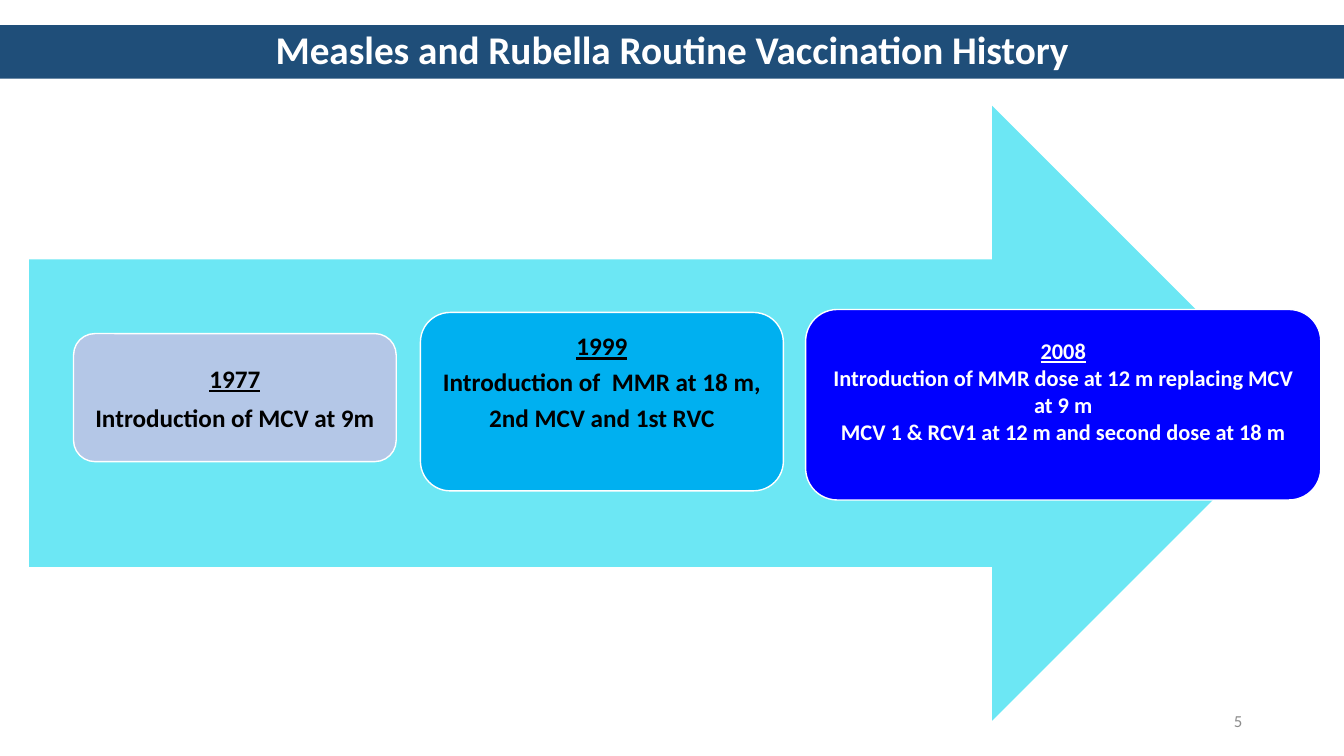
from pptx import Presentation
from pptx.dml.color import RGBColor
from pptx.enum import shapes, text
from pptx.util import Inches, Pt

WHITE, BLACK = "FFFFFF", "000000"


def rgb(value):
    return RGBColor.from_string(value)


def write(shape, lines, size, color, bold=True, align=text.PP_ALIGN.CENTER,
          spacing=1.0, after=0, heading=False, inset=(0.07, 0.07, 0.07, 0.07)):
    """Fill a shape with one paragraph per line; a heading line is underlined."""
    frame = shape.text_frame
    frame.word_wrap = True
    frame.auto_size = text.MSO_AUTO_SIZE.NONE
    frame.vertical_anchor = text.MSO_ANCHOR.MIDDLE
    (frame.margin_left, frame.margin_top,
     frame.margin_right, frame.margin_bottom) = map(Inches, inset)
    for i, line in enumerate(lines):
        paragraph = frame.paragraphs[0] if i == 0 else frame.add_paragraph()
        paragraph.alignment = align
        paragraph.line_spacing = spacing
        paragraph.space_before = Pt(0)
        paragraph.space_after = Pt(after)
        run = paragraph.add_run()
        run.text = line
        run.font.name = "Calibri"
        run.font.size = Pt(size)
        run.font.bold = bold
        run.font.underline = heading and i == 0
        run.font.color.rgb = rgb(color)


prs = Presentation()
prs.slide_width, prs.slide_height = Inches(13.33), Inches(7.5)
slide = prs.slides.add_slide(prs.slide_layouts[5])

# Title band
title = slide.shapes.title
title.left, title.top = Inches(0), Inches(0.25)
title.width, title.height = Inches(13.33), Inches(0.53)
title.fill.solid()
title.fill.fore_color.rgb = rgb("1F4E79")
write(title, ["Measles and Rubella Routine Vaccination History"], 28, WHITE,
      spacing=0.9, inset=(0.1, 0.05, 0.1, 0.05))

# Timeline arrow
timeline = slide.shapes.add_shape(
    shapes.MSO_SHAPE.RIGHT_ARROW, Inches(0.29), Inches(1.05), Inches(12.6), Inches(6.1))
timeline.shadow.inherit = False
timeline.fill.solid()
timeline.fill.fore_color.rgb = rgb("6CE7F4")
timeline.line.fill.background()

# Milestones: box, fill, lines, size, colour, line spacing, space after, bottom inset
milestones = [
    ((0.73, 3.31, 3.2, 1.27), "B4C7E7",
     ["1977", "Introduction of MCV at 9m"], 18, BLACK, 1.0, 6.3, 0.07),
    ((4.17, 3.1, 3.6, 1.77), "00B0F0",
     ["1999", "Introduction of  MMR at 18 m,", "2nd MCV and 1st RVC"],
     18, BLACK, 0.9, 6.3, 0.43),
    ((7.99, 3.07, 5.11, 1.89), "0000FF",
     ["2008", "Introduction of MMR dose at 12 m replacing MCV at 9 m",
      "MCV 1 & RCV1 at 12 m and second dose at 18 m"], 16, WHITE, 1.0, 0, 0.34),
]
for box, fill, lines, size, color, spacing, after, bottom in milestones:
    milestone = slide.shapes.add_shape(
        shapes.MSO_SHAPE.ROUNDED_RECTANGLE, *map(Inches, box))
    milestone.shadow.inherit = False
    milestone.fill.solid()
    milestone.fill.fore_color.rgb = rgb(fill)
    milestone.line.color.rgb = rgb(WHITE)
    milestone.line.width = Pt(1)
    write(milestone, lines, size, color, spacing=spacing, after=after,
          heading=True, inset=(0.07, 0.07, 0.07, bottom))

# Page number
page_number = slide.shapes.add_textbox(
    Inches(9.42), Inches(6.95), Inches(3), Inches(0.4))
write(page_number, ["5"], 12, "8C8C8C", bold=False,
      align=text.PP_ALIGN.RIGHT, inset=(0.1, 0.05, 0.1, 0.05))

prs.save("out.pptx")
